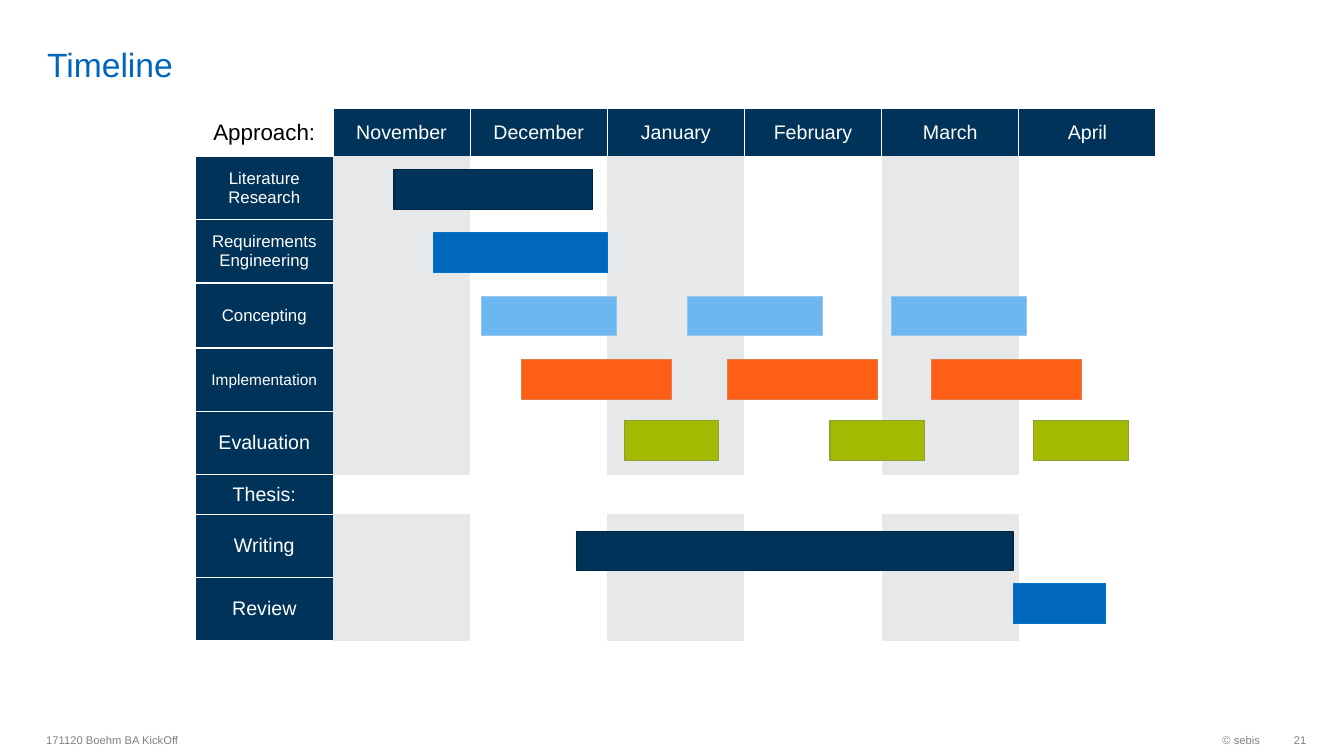
import pptx
import pptx.dml.color
import pptx.enum.shapes
import pptx.enum.text
import pptx.oxml
import pptx.oxml.ns
import pptx.util

Pt = pptx.util.Pt
ALIGN = pptx.enum.text.PP_ALIGN
ANCHOR = pptx.enum.text.MSO_ANCHOR
NO_STYLE_NO_GRID = "{2D5ABB26-0587-4C30-8999-92F81FD0307C}"

WHITE, BLACK, GREY, BAND = "FFFFFF", "000000", "808080", "E7E8EA"
NAVY, BLUE, SKY, ORANGE, GREEN = "003359", "0068BC", "6CB7F2", "FF5E15", "A2BA02"
OUTLINES = {NAVY: ("002642", 0.85), BLUE: ("0073CF", 0.75), SKY: ("98C6EA", 0.75),
            ORANGE: ("E37C4D", 0.75), GREEN: ("91A02F", 0.75)}

MONTHS = ["November", "December", "January", "February", "March", "April"]
COL_WIDTH, HEADER_HEIGHT, BAR_HEIGHT = 98, 33.8, 28.4
# label, font size, row height
TASKS = [("Literature\nResearch", 12, 45.3), ("Requirements Engineering", 12, 45.3),
         ("Concepting", 12, 46.5), ("Implementation", 11, 45.3), ("Evaluation", 14, 45.3),
         ("Thesis:", 14, 28.3), ("Writing", 14, 44.8), ("Review", 14, 45.3)]
CYCLE_STARTS = [344.2, 491.2, 636.7]
# colour, top, width, left edges
BARS = [(NAVY, 121, 141.8, [281.5]),
        (BLUE, 166.3, 124.6, [309.6]),
        (SKY, 211.6, 96.5, CYCLE_STARTS),
        (ORANGE, 257, 107.3, [x + 28.5 for x in CYCLE_STARTS]),
        (GREEN, 300.4, 67.7, [x + 101.7 for x in CYCLE_STARTS]),
        (NAVY, 379.4, 311.8, [411.8]),
        (BLUE, 416.8, 66.2, [723.6])]


def rgb(value):
    return pptx.dml.color.RGBColor.from_string(value)


class Deck:
    font = "Arial"

    def __init__(self, prs):
        self.s = prs.slides.add_slide(prs.slide_layouts[6])

    def set_text(self, tf, text, size, color, align):
        for i, line in enumerate(text.split("\n")):
            p = tf.add_paragraph() if i else tf.paragraphs[0]
            p.text = line
            p.alignment = align
            p.font.name, p.font.size = self.font, Pt(size)
            p.font.color.rgb = rgb(color)

    def text(self, x, y, w, h, text, size, color, align=ALIGN.LEFT,
             anchor=ANCHOR.MIDDLE, right=7.2, vertical=3.6):
        tf = self.s.shapes.add_textbox(Pt(x), Pt(y), Pt(w), Pt(h)).text_frame
        tf.word_wrap = True
        tf.vertical_anchor = anchor
        tf.margin_right = Pt(right)
        tf.margin_top = tf.margin_bottom = Pt(vertical)
        self.set_text(tf, text, size, color, align)

    def bar(self, x, y, w, h, color):
        sp = self.s.shapes.add_shape(pptx.enum.shapes.MSO_SHAPE.RECTANGLE,
                                     Pt(x), Pt(y), Pt(w), Pt(h))
        sp.shadow.inherit = False
        sp.fill.solid()
        sp.fill.fore_color.rgb = rgb(color)
        line, width = OUTLINES[color]
        sp.line.color.rgb = rgb(line)
        sp.line.width = Pt(width)

    def table(self, x, y, widths, heights):
        table = self.s.shapes.add_table(len(heights), len(widths), Pt(x), Pt(y),
                                        Pt(sum(widths)), Pt(sum(heights))).table
        style = table._tbl.tblPr.find(pptx.oxml.ns.qn("a:tableStyleId"))
        style.text = NO_STYLE_NO_GRID
        for col, width in zip(table.columns, widths):
            col.width = Pt(width)
        for row, height in zip(table.rows, heights):
            row.height = Pt(height)
        return table

    def cell(self, cell, fill, text="", size=12, color=WHITE, sides=""):
        """Fill a cell; sides names its white borders, in the order L, R, T, B."""
        tc_pr = cell._tc.get_or_add_tcPr()
        for side in sides:
            tc_pr.append(pptx.oxml.parse_xml(
                f'<a:ln{side} {pptx.oxml.ns.nsdecls("a")} w="{Pt(1)}"><a:solidFill>'
                f'<a:srgbClr val="{WHITE}"/></a:solidFill></a:ln{side}>'))
        cell.fill.solid()
        cell.fill.fore_color.rgb = rgb(fill)
        cell.vertical_anchor = ANCHOR.MIDDLE
        cell.margin_top = cell.margin_bottom = 0
        self.set_text(cell.text_frame, text, size, color, ALIGN.CENTER)


def main():
    prs = pptx.Presentation()
    prs.slide_width, prs.slide_height = Pt(960), Pt(540)
    deck = Deck(prs)

    deck.text(26.6, 3.6, 834, 56.9, "Timeline", 24, "0065BD",
              anchor=ANCHOR.BOTTOM, vertical=0)

    table = deck.table(139.8, 77.7, [COL_WIDTH] * (len(MONTHS) + 1),
                       [HEADER_HEIGHT] + [height for _, _, height in TASKS])
    deck.cell(table.cell(0, 0), WHITE, "Approach:", 16, BLACK, "LRTB")
    for col, month in enumerate(MONTHS, 1):
        deck.cell(table.cell(0, col), NAVY, month, 14, sides="LRT")
    for row, (label, size, _) in enumerate(TASKS, 1):
        deck.cell(table.cell(row, 0), NAVY, label, size, sides="LTB")
        for col in range(1, len(MONTHS) + 1):
            shaded = col % 2 and label != "Thesis:"
            deck.cell(table.cell(row, col), BAND if shaded else WHITE)

    for color, top, width, lefts in BARS:
        for left in lefts:
            deck.bar(left, top, width, BAR_HEIGHT, color)

    deck.text(25.9, 517, 453.6, 23, "171120 Boehm BA KickOff", 8, GREY)
    deck.text(738.7, 517, 168.5, 23, "© sebis", 8, GREY, ALIGN.RIGHT)
    deck.text(907.2, 517, 25.9, 23, "21", 8, GREY, ALIGN.RIGHT, right=0)

    prs.save("out.pptx")


if __name__ == "__main__":
    main()
